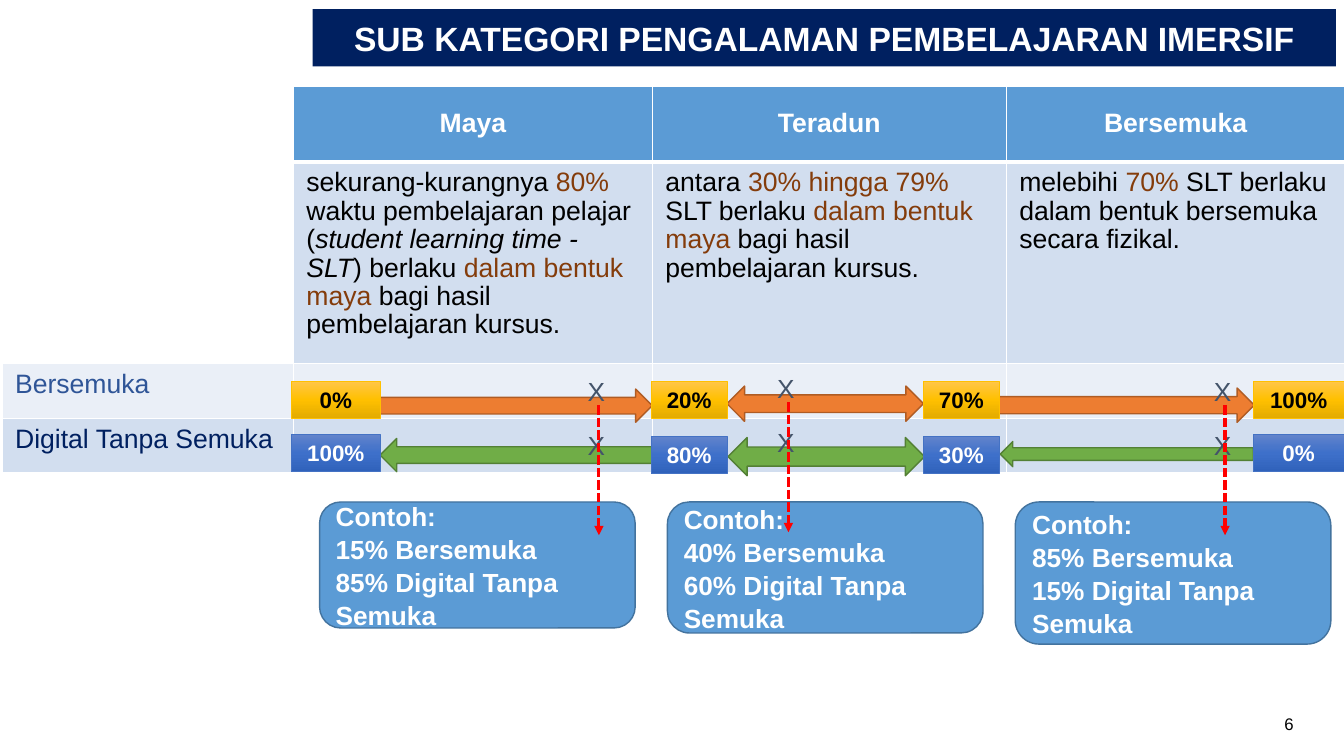
import copy

import pptx
import pptx.util
import pptx.dml.color
import pptx.enum.dml
import pptx.enum.shapes
import pptx.enum.text
import pptx.oxml
import pptx.oxml.ns

Inches = pptx.util.Inches
Pt = pptx.util.Pt
qn = pptx.oxml.ns.qn
KIND = pptx.enum.shapes.MSO_SHAPE
ALIGN = pptx.enum.text.PP_ALIGN
ANCHOR = pptx.enum.text.MSO_ANCHOR

HUES = {
    "white": "FFFFFF", "black": "000000", "navy": "002060", "blue": "5B9BD5",
    "edge": "43739E", "brown": "843C0B", "label": "2F5597", "slate": "44546A",
    "pale": "EAEFF7", "mist": "D2DEEF", "red": "FF0000",
    "orange": "ED7D31", "rust": "AF5C24", "green": "70AD47", "moss": "538035",
    "gold": "FFC000", "royal": "4472C4",
}
GOLDS = ["FFC64B", "FFC000", "E3AB00"]
BLUES = ["6183CB", "3E70CA", "3062BB"]
PAD = (0.13, 0.07)


def rgb(name):
    return pptx.dml.color.RGBColor.from_string(HUES.get(name, name))


def write(frame, paras, size=18.7, color="black", bold=False, align=ALIGN.LEFT,
          anchor=ANCHOR.TOP, pad=(0.1, 0.05), gap=None):
    """Each paragraph is a string or a list of (text, colour, italic) runs."""
    frame.word_wrap = True
    frame.vertical_anchor = anchor
    frame.margin_left = frame.margin_right = Inches(pad[0])
    frame.margin_top = frame.margin_bottom = Inches(pad[1])
    for i, runs in enumerate(paras):
        para = frame.add_paragraph() if i else frame.paragraphs[0]
        para.alignment = align
        if gap:
            para.line_spacing = gap
        for text, hue, slant in [(runs, color, False)] if isinstance(runs, str) else runs:
            run = para.add_run()
            run.text = text
            font = run.font
            font.name, font.size = "Arial", Pt(size)
            font.bold, font.italic = bold, slant
            font.color.rgb = rgb(hue)


def label(slide, box, text, **form):
    area = slide.shapes.add_textbox(*map(Inches, box))
    write(area.text_frame, [text], **form)


def shape(slide, kind, box, fill=None, line=None, width=1):
    item = slide.shapes.add_shape(kind, *map(Inches, box))
    item.shadow.inherit = False
    if fill:
        item.fill.solid()
        item.fill.fore_color.rgb = rgb(fill)
    if line:
        item.line.color.rgb = rgb(line)
        item.line.width = Pt(width)
    else:
        item.line.fill.background()
    return item


def border(cell, sides):
    """Sides maps L, R, T, B to a white line width in points."""
    props = cell._tc.get_or_add_tcPr()
    for i, (side, width) in enumerate(sides.items()):
        props.insert(i, pptx.oxml.parse_xml(
            f'<a:ln{side} {pptx.oxml.ns.nsdecls("a")} w="{Pt(width)}"><a:solidFill>'
            f'<a:srgbClr val="{HUES["white"]}"/></a:solidFill></a:ln{side}>'))


# Title bar
def title(slide, box, text):
    bar = shape(slide, KIND.RECTANGLE, box, "navy")
    write(bar.text_frame, [text], size=24, color="white", bold=True,
          align=ALIGN.CENTER, anchor=ANCHOR.MIDDLE, pad=PAD)


# Table of the three categories
def table(slide, box, cols, rows):
    heads = ["", "Maya", "Teradun", "Bersemuka"]
    facts = [
        None,
        [("sekurang-kurangnya ", "black", False), ("80% ", "brown", False),
         ("waktu pembelajaran pelajar (", "black", False),
         ("student learning time - SLT", "black", True),
         (") berlaku ", "black", False), ("dalam bentuk maya ", "brown", False),
         ("bagi hasil pembelajaran kursus.", "black", False)],
        [("antara ", "black", False), ("30% hingga 79% ", "brown", False),
         ("SLT berlaku ", "black", False), ("dalam bentuk maya ", "brown", False),
         ("bagi hasil pembelajaran kursus.", "black", False)],
        [("melebihi ", "black", False), ("70% ", "brown", False),
         ("SLT berlaku dalam bentuk bersemuka secara fizikal.", "black", False)],
    ]
    modes = [[("Bersemuka", "label", False)], [("Digital Tanpa Semuka", "navy", False)]]
    cells = [heads, facts] + [[mode, None, None, None] for mode in modes]
    fills = ["blue", "mist", "pale", "mist"]
    grid = slide.shapes.add_table(4, 4, *map(Inches, box)).table
    grid.horz_banding = False
    for col, width in zip(grid.columns, cols):
        col.width = Inches(width)
    for r, high in enumerate(rows):
        grid.rows[r].height = Inches(high)
        for c, text in enumerate(cells[r]):
            cell = grid.cell(r, c)
            if c == 0 and r < 2:
                cell.fill.background()
            else:
                cell.fill.solid()
                cell.fill.fore_color.rgb = rgb(fills[r])
            border(cell, {"L": 1, "R": 1, "T": 3 if r == 1 and c else 1,
                          "B": 3 if r == 0 and c else 1})
            if not text:
                continue
            head = r == 0
            cell.margin_left = cell.margin_right = Inches(PAD[0])
            cell.margin_top = cell.margin_bottom = Inches(PAD[1])
            cell.vertical_anchor = ANCHOR.MIDDLE if head else ANCHOR.TOP
            frame = cell.text_frame
            write(frame, [text], size=19, color="white", bold=head, pad=PAD,
                  align=ALIGN.CENTER if head else ALIGN.LEFT, gap=0.96,
                  anchor=cell.vertical_anchor)


# Example boxes
def cases(slide, left, top, step):
    for i, (face, high) in enumerate([(15, 1.25), (40, 1.3), (85, 1.41)]):
        card = shape(slide, KIND.ROUNDED_RECTANGLE,
                     (left + i * step, top, 3.13, high), "blue", "edge")
        write(card.text_frame, ["Contoh:", f"{face}% Bersemuka",
                                f"{100 - face}% Digital Tanpa Semuka"],
              color="white", bold=True, anchor=ANCHOR.MIDDLE, gap=1.05)


# Percentage scale: arrows and end values
def arrows(slide, items, fill, line):
    for kind, *box in items:
        shape(slide, kind, box, fill, line)


def values(slide, tops, texts, stops, line, color):
    spots = [(2.89, 0.88), (6.46, 0.75), (9.16, 0.75), (12.43, 0.9)]
    for (left, width), top, text in zip(spots, tops, texts):
        tag = shape(slide, KIND.RECTANGLE, (left, top, width, 0.37), None, line, 0.5)
        tag.fill.gradient()
        tag.fill.gradient_angle = 270
        chain = tag._element.spPr.find(".//" + qn("a:gsLst"))
        chain.insert(1, copy.deepcopy(chain[0]))
        for i, stop in enumerate(tag.fill.gradient_stops):
            stop.position = i / 2
            stop.color.rgb = rgb(stops[i])
        tag.line.color.rgb = rgb(line)
        write(tag.text_frame, [text], size=16, color=color, bold=True,
              align=ALIGN.CENTER)


# X marks with a dashed pointer to the example
def marker(slide, x, y):
    for drop in (0, 0.54):
        label(slide, (x - 0.21, y + drop, 0.42, 0.42), "X", color="slate")
    ray = slide.shapes.add_connector(
        pptx.enum.shapes.MSO_CONNECTOR.STRAIGHT,
        *map(Inches, (x, y + 0.35, x, y + 1.64)))
    ray.line.color.rgb = rgb("red")
    ray.line.width = Pt(2.25)
    ray.line.dash_style = pptx.enum.dml.MSO_LINE.SQUARE_DOT
    props = ray._element.spPr
    tip = pptx.oxml.parse_xml(
        f'<a:tailEnd {pptx.oxml.ns.nsdecls("a")} type="triangle"/>')
    props.find(qn("a:ln")).append(tip)
    props.append(pptx.oxml.parse_xml(f'<a:effectLst {pptx.oxml.ns.nsdecls("a")}/>'))


def main():
    deck = pptx.Presentation()
    deck.slide_width, deck.slide_height = Inches(13.33), Inches(7.5)
    slide = deck.slides.add_slide(deck.slide_layouts[6])
    label(slide, (12.64, 7.03, 0.61, 0.4), "6", size=12)
    table(slide, (0.02, 0.86, 13.32, 3.83),
          [2.89, 3.56, 3.51, 3.36], [0.75, 2, 0.54, 0.54])
    cases(slide, 3.17, 4.98, 3.45)
    arrows(slide, [(KIND.RIGHT_ARROW, 3.77, 3.86, 2.7, 0.33),
                   (KIND.LEFT_RIGHT_ARROW, 7.21, 3.83, 1.95, 0.35),
                   (KIND.RIGHT_ARROW, 9.91, 3.85, 2.53, 0.34)], "orange", "rust")
    arrows(slide, [(KIND.LEFT_ARROW, 3.77, 4.35, 2.7, 0.33),
                   (KIND.LEFT_RIGHT_ARROW, 7.22, 4.34, 1.95, 0.38),
                   (KIND.LEFT_ARROW, 9.92, 4.38, 2.51, 0.25)], "green", "moss")
    values(slide, [3.78] * 4, ["0%", "20%", "70%", "100%"], GOLDS, "gold", "black")
    values(slide, [4.31, 4.33, 4.33, 4.31], ["100%", "80%", "30%", "0%"],
           BLUES, "royal", "white")
    for x, y in [(5.94, 3.67), (7.82, 3.64), (12.15, 3.67)]:
        marker(slide, x, y)
    title(slide, (3.1, 0.09, 10.15, 0.57),
          "SUB KATEGORI PENGALAMAN PEMBELAJARAN IMERSIF")
    deck.save("out.pptx")


if __name__ == "__main__":
    main()
